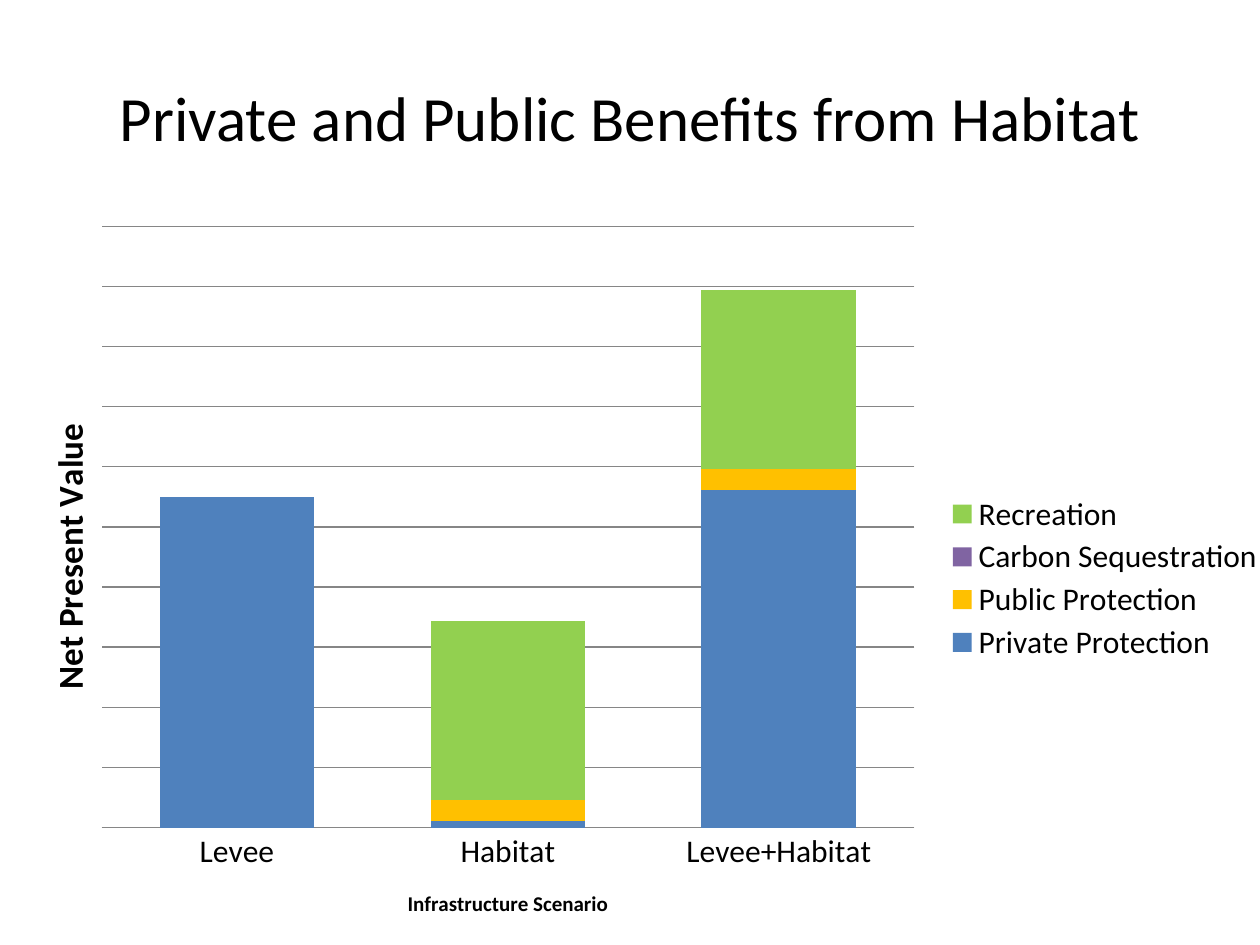
"""Build a slide with a stacked column chart of habitat benefits."""
from lxml import etree
from pptx import Presentation
from pptx.chart.data import CategoryChartData
from pptx.dml.color import RGBColor
from pptx.enum.chart import XL_CHART_TYPE, XL_LEGEND_POSITION, XL_TICK_LABEL_POSITION, XL_TICK_MARK
from pptx.enum.shapes import MSO_SHAPE
from pptx.enum.text import MSO_ANCHOR, PP_ALIGN
from pptx.oxml.ns import qn
from pptx.util import Inches, Pt

STACKED = XL_CHART_TYPE.COLUMN_STACKED
RIGHT = XL_LEGEND_POSITION.RIGHT
NO_LABELS, NO_TICKS = XL_TICK_LABEL_POSITION.NONE, XL_TICK_MARK.NONE
BLACK, WHITE = RGBColor(0, 0, 0), RGBColor(255, 255, 255)
GRAY = RGBColor(0x86, 0x86, 0x86)
BLUE, AMBER = RGBColor(0x4F, 0x81, 0xBD), RGBColor(0xFF, 0xC0, 0x00)
PURPLE, GREEN = RGBColor(0x80, 0x64, 0xA2), RGBColor(0x92, 0xD0, 0x50)

FONT = "Calibri"
TITLE = "Private and Public Benefits from Habitat"
SCENARIOS = ["Levee", "Habitat", "Levee+Habitat"]
BENEFITS = [
    ("Private Protection", (98, 2, 100), BLUE),
    ("Public Protection", (0, 6, 6), AMBER),
    ("Carbon Sequestration", (0, 0, 0), PURPLE),
    ("Recreation", (0, 53, 53), GREEN),
]
VALUE_SCALE = {"minimum_scale": 0, "maximum_scale": 178, "major_unit": 17.8}
PLOT_AREA = {"layoutTarget": "inner", "xMode": "edge", "yMode": "edge",
             "x": 0.08, "y": 0.02, "w": 0.64, "h": 0.82}
LEGEND_AREA = {"xMode": "edge", "yMode": "edge", "x": 0.74, "y": 0.38, "w": 0.26, "h": 0.24}
VALUE_TITLE_AREA = {"xMode": "edge", "yMode": "edge", "x": 0.03, "y": 0.28}


def set_font(font, size, bold=False):
    for name, value in {"name": FONT, "size": Pt(size), "bold": bold}.items():
        setattr(font, name, value)
    font.color.rgb = BLACK


def set_layout(element, position, area):
    for old in element.findall(qn("c:layout")):
        element.remove(old)
    layout = etree.Element(qn("c:layout"))
    manual = etree.SubElement(layout, qn("c:manualLayout"))
    for name, value in area.items():
        etree.SubElement(manual, qn(f"c:{name}")).set("val", str(value))
    element.insert(position, layout)


def name_axis(axis, text, size):
    frame = axis.axis_title.text_frame
    frame.text = text
    set_font(frame.paragraphs[0].runs[0].font, size, True)


def add_backdrop(page, width, height):
    top = Inches(1.58)
    box = page.shapes.add_shape(MSO_SHAPE.RECTANGLE, 0, top, width, height - top)
    box.shadow.inherit = False
    box.fill.solid()
    box.fill.fore_color.rgb = WHITE
    box.line.color.rgb = WHITE
    box.line.width = Pt(2)
    page.shapes._spTree.insert(2, box._element)


def add_title(page, width):
    title = page.shapes.title
    placing = {"left": 0, "top": Inches(0.3), "width": width, "height": Inches(1.25)}
    for name, value in placing.items():
        setattr(title, name, value)
    title.text_frame.text = TITLE
    title.text_frame.vertical_anchor = MSO_ANCHOR.MIDDLE
    para = title.text_frame.paragraphs[0]
    para.alignment = PP_ALIGN.CENTER
    set_font(para.runs[0].font, 36)


def add_benefit_chart(page, height):
    data = CategoryChartData()
    data.categories = SCENARIOS
    for name, values, _ in BENEFITS:
        data.add_series(name, values)
    top = Inches(1.68)
    chart = page.shapes.add_chart(STACKED, 0, top, Inches(10.08), height - top, data).chart
    set_font(chart.font, 10)
    chart.has_title = False

    plot = chart.plots[0]
    plot.gap_width, plot.overlap, plot.vary_by_categories = 75, 100, False
    for series, (_, _, color) in zip(plot.series, BENEFITS):
        series.format.fill.solid()
        series.format.fill.fore_color.rgb = color

    scenarios, values = chart.category_axis, chart.value_axis
    scenarios.major_tick_mark = NO_TICKS
    scenarios.format.line.color.rgb = GRAY
    set_font(scenarios.tick_labels.font, 18)
    name_axis(scenarios, "Infrastructure Scenario", 12)

    for name, value in VALUE_SCALE.items():
        setattr(values, name, value)
    values.tick_label_position = NO_LABELS
    values.major_tick_mark = NO_TICKS
    values.format.line.fill.background()
    values.has_major_gridlines = True
    values.major_gridlines.format.line.color.rgb = GRAY
    name_axis(values, "Net Present Value", 20)

    chart.has_legend = True
    chart.legend.position = RIGHT
    chart.legend.include_in_layout = False
    set_font(chart.legend.font, 18)

    set_layout(chart._chartSpace.chart.plotArea, 0, PLOT_AREA)
    set_layout(chart.legend._element, 1, LEGEND_AREA)
    set_layout(values.axis_title._element, 1, VALUE_TITLE_AREA)


def main():
    deck = Presentation()
    deck.slide_width, deck.slide_height = Inches(10), Inches(7.5)
    page = deck.slides.add_slide(deck.slide_layouts[5])
    add_backdrop(page, deck.slide_width, deck.slide_height)
    add_title(page, deck.slide_width)
    add_benefit_chart(page, deck.slide_height)
    deck.save("out.pptx")


if __name__ == "__main__":
    main()
